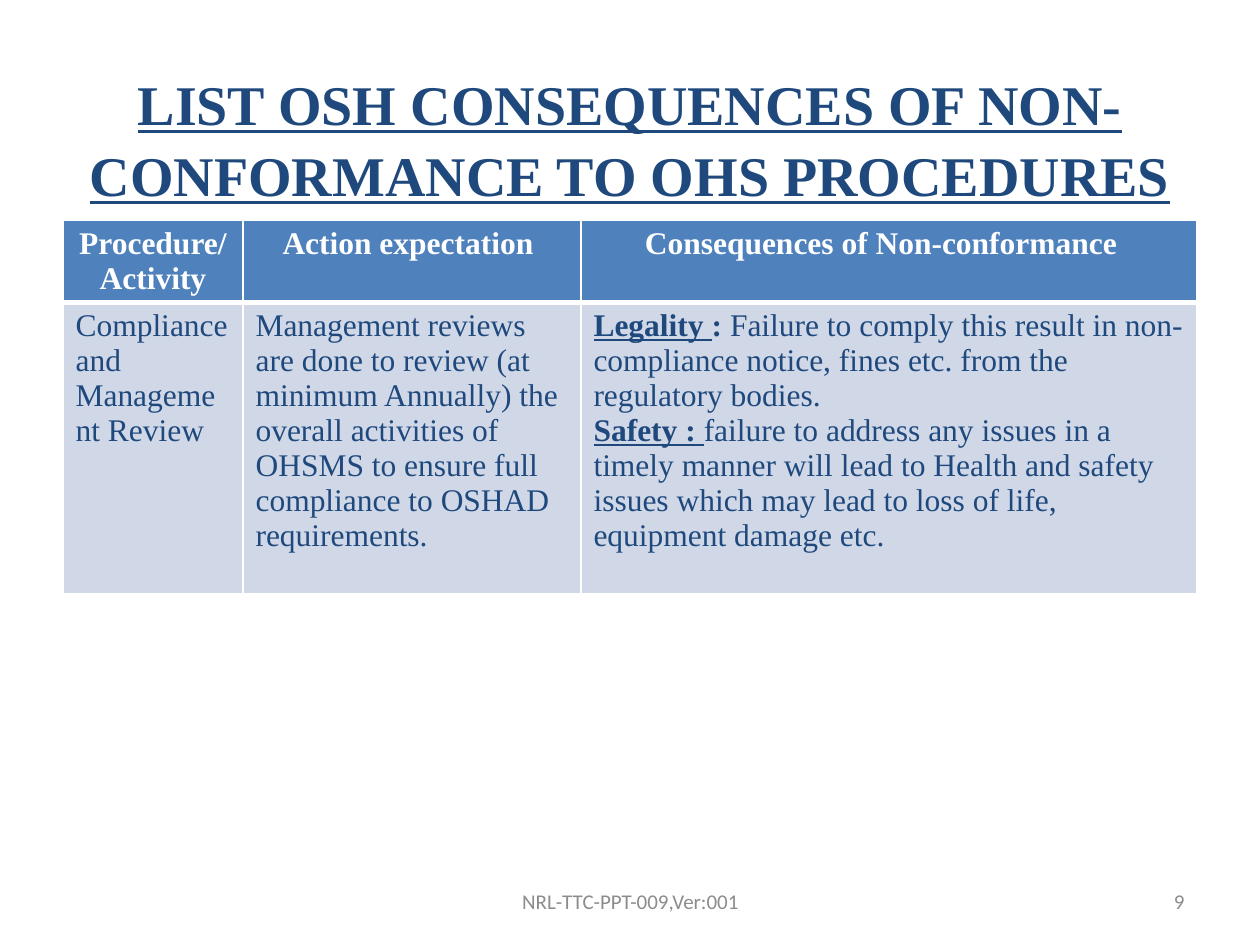
from lxml import etree
from pptx import Presentation
from pptx import util as u
from pptx.dml.color import RGBColor
from pptx.enum import text
from pptx.oxml import ns

SCALE = 914400 / 126
NAVY, BLUE, PALE, WHITE, GRAY = "1F497D", "4F81BD", "D0D8E8", "FFFFFF", "8C8C8C"
SERIF, SANS = "Times New Roman", "Calibri"
LEFT, MID, RIGHT = text.PP_ALIGN.LEFT, text.PP_ALIGN.CENTER, text.PP_ALIGN.RIGHT
COLS = (180, 338, 616)
ROWS = (82, 291)
HEADS = ("Procedure/Activity", "Action expectation ", "Consequences of Non-conformance  ")
BODY = (
    [[("Compliance and Management Review", "")]],
    [[("Management reviews are done to review (at minimum Annually) the overall "
       "activities of OHSMS to ensure full compliance to OSHAD requirements.", "")]],
    [[("Legality ", "bu"), (": ", "b"),
      ("Failure to comply this result in non-compliance notice, fines etc. "
       "from the regulatory bodies.", "")],
     [("Safety : ", "bu"),
      ("failure to address any issues in a timely manner will lead to Health and "
       "safety issues which may lead to loss of life, equipment damage etc.", "")]],
)


def px(num):
    """Turn px into EMU."""
    return u.Emu(round(num * SCALE))


def rgb(code):
    """Turn a hex string into a colour."""
    return RGBColor.from_string(code)


def write(frame, paras, size, face, color, align):
    """Fill a text frame with paragraphs of (words, style) runs."""
    frame.word_wrap = True
    for i, runs in enumerate(paras):
        para = frame.add_paragraph() if i else frame.paragraphs[0]
        para.alignment = align
        for words, style in runs:
            run = para.add_run()
            run.text = words
            font = run.font
            font.size, font.name = u.Pt(size), face
            font.bold, font.underline = "b" in style, "u" in style
            font.color.rgb = rgb(color)


def edge(cell, base):
    """Draw white cell borders, with the bottom one of the given width."""
    props = cell._tc.get_or_add_tcPr()
    for i, side in enumerate(("lnL", "lnR", "lnT", "lnB")):
        width = base if side == "lnB" else 1
        line = etree.Element(ns.qn("a:" + side), w=str(u.Pt(width)))
        fill = etree.SubElement(line, ns.qn("a:solidFill"))
        etree.SubElement(fill, ns.qn("a:srgbClr"), val=WHITE)
        props.insert(i, line)


def title(slide, box):
    """Place the heading in the title placeholder."""
    shape = slide.shapes.title
    shape.left, shape.top, shape.width, shape.height = map(px, box)
    frame = shape.text_frame
    frame.vertical_anchor = text.MSO_ANCHOR.MIDDLE
    words = "LIST OSH CONSEQUENCES OF NON-CONFORMANCE TO OHS PROCEDURES"
    write(frame, [[(words, "bu")]], 32, SERIF, NAVY, MID)
    frame.paragraphs[0].line_spacing = 1.06


def grid(slide, left, top):
    """Place the table of procedures and consequences."""
    table = slide.shapes.add_table(
        len(ROWS), len(COLS), px(left), px(top), px(sum(COLS)), px(sum(ROWS))).table
    for row, high in zip(table.rows, ROWS):
        row.height = px(high)
    for i, wide in enumerate(COLS):
        table.columns[i].width = px(wide)
        parts = (([[(HEADS[i], "b")]], BLUE, WHITE, MID, 3),
                 (BODY[i], PALE, NAVY, LEFT, 1))
        for j, (paras, fill, color, align, base) in enumerate(parts):
            cell = table.cell(j, i)
            cell.fill.solid()
            cell.fill.fore_color.rgb = rgb(fill)
            edge(cell, base)
            write(cell.text_frame, paras, 18, SERIF, color, align)


def foot(slide, box, words, align):
    """Place one line of small gray text in the footer."""
    frame = slide.shapes.add_textbox(*map(px, box)).text_frame
    frame.vertical_anchor = text.MSO_ANCHOR.MIDDLE
    write(frame, [[(words, "")]], 12, SANS, GRAY, align)


def main():
    """Build and save the slide."""
    deck = Presentation()
    deck.slide_width, deck.slide_height = px(1260), px(945)
    slide = deck.slides.add_slide(deck.slide_layouts[5])
    title(slide, (63, 38, 1134, 197))
    grid(slide, 63, 220)
    foot(slide, (903, 876, 294, 50), "9", RIGHT)
    foot(slide, (431, 876, 399, 50), "NRL-TTC-PPT-009,Ver:001", MID)
    deck.save("out.pptx")


if __name__ == "__main__":
    main()
